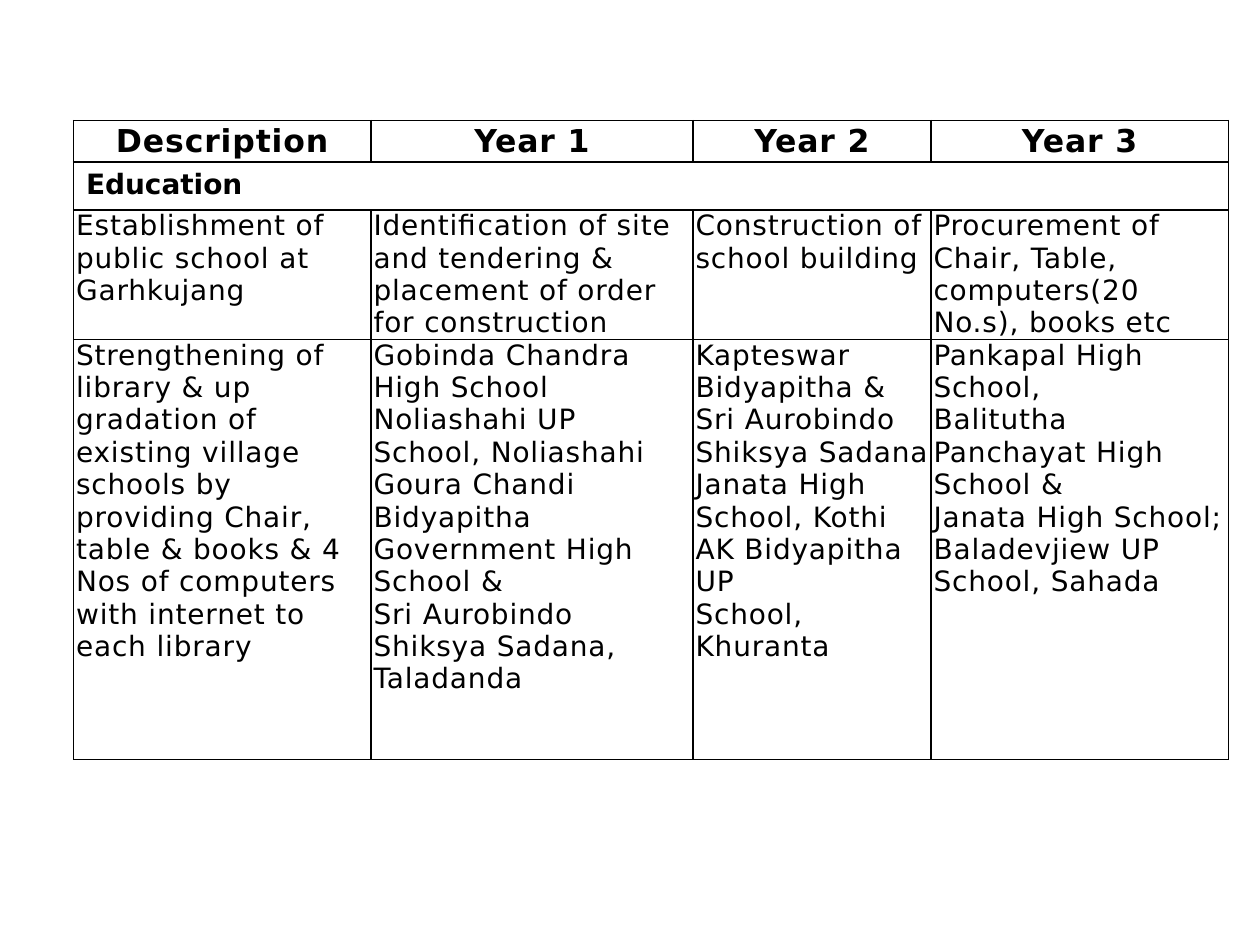
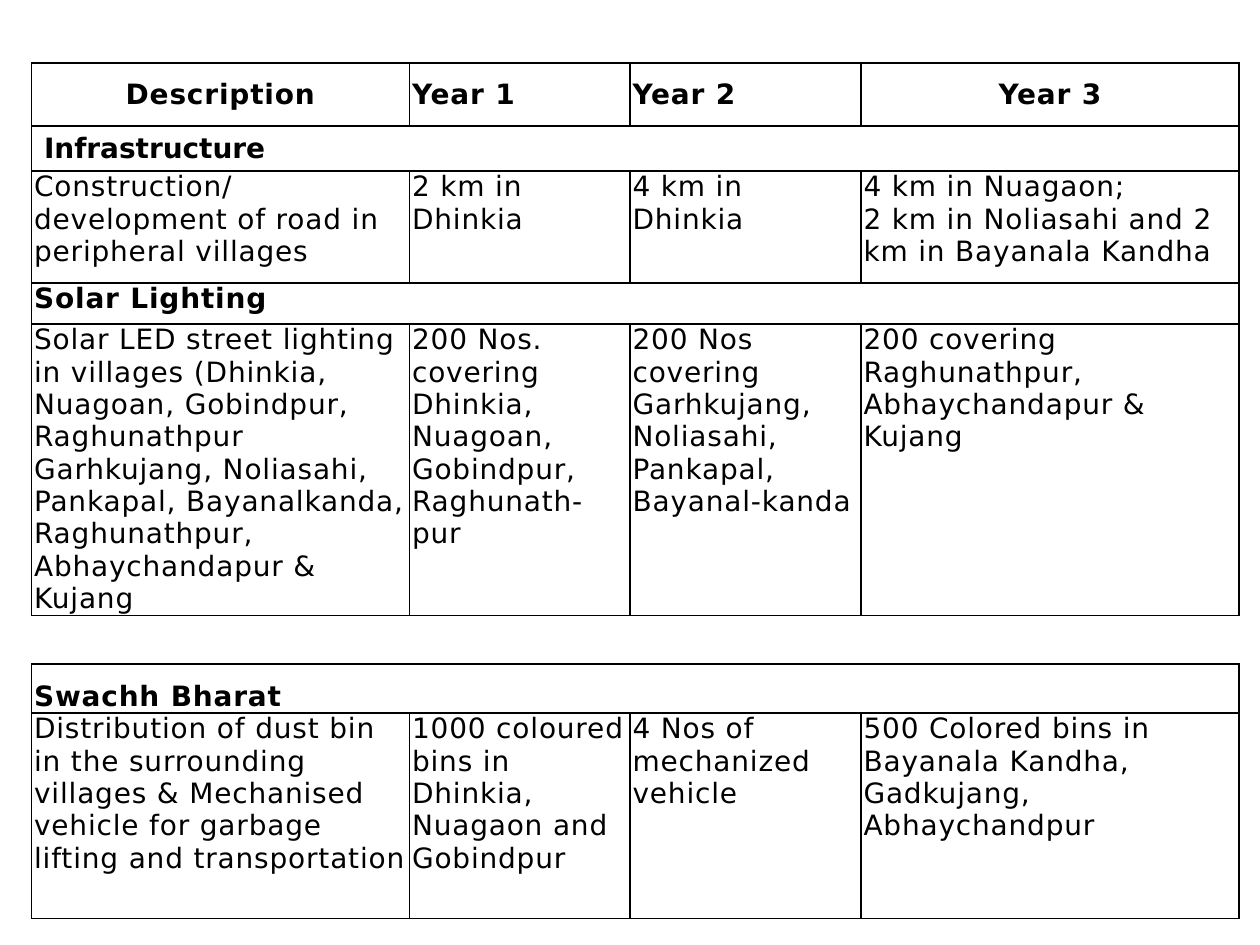
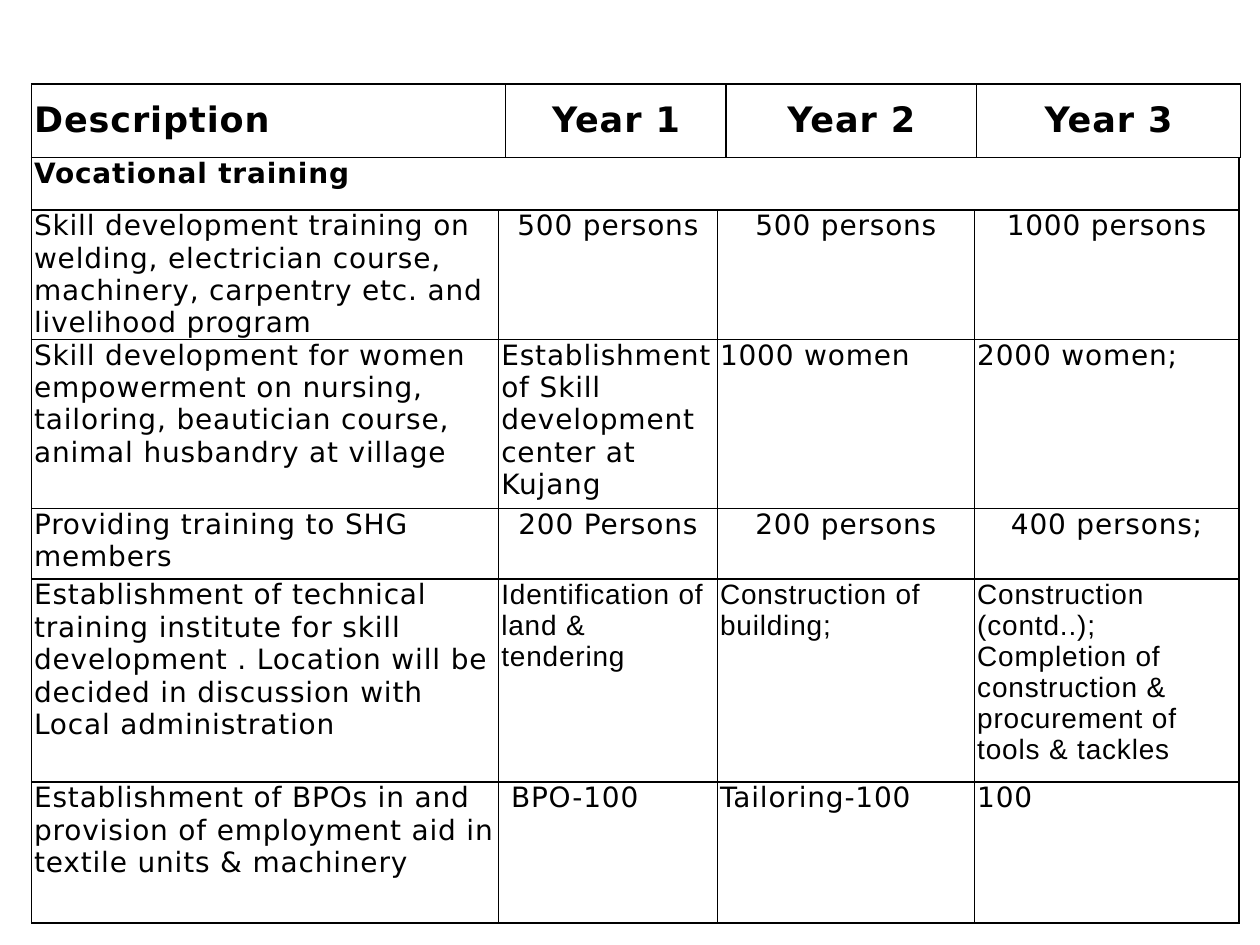
from dataclasses import dataclass, field

from lxml import etree
from pptx import Presentation
from pptx.dml.color import RGBColor
from pptx.enum import text as txt
from pptx.oxml import ns
from pptx.util import Pt

BLACK = RGBColor(0x00, 0x00, 0x00)
BODY_FONT = "DejaVu Sans"
ALIGNMENTS = {"l": txt.PP_ALIGN.LEFT, "c": txt.PP_ALIGN.CENTER}
YEARS = ("Description", "Year 1", "Year 2", "Year 3")


def write(frame, content, size=16, font=BODY_FONT, bold=False, align="l",
          tracking=0.5, line_spacing=None):
    """Fill a text frame, one paragraph per line of content."""
    frame.word_wrap = True
    for index, line in enumerate(content.split("\n")):
        paragraph = frame.add_paragraph() if index else frame.paragraphs[0]
        paragraph.alignment = ALIGNMENTS[align]
        paragraph.line_spacing = line_spacing
        run = paragraph.add_run()
        run.text = line
        run.font.size, run.font.name, run.font.bold = Pt(size), font, bold
        run.font.color.rgb = BLACK
        run.font._element.set("spc", str(round(tracking * 100)))


@dataclass
class Row:
    height: float
    cells: tuple
    aligns: str = "llll"
    fonts: tuple = (BODY_FONT,) * 4
    anchor: txt.MSO_ANCHOR = txt.MSO_ANCHOR.TOP
    margins: tuple = (1.5, 0)
    style: dict = field(default_factory=dict)


def header(height, size, aligns):
    return Row(height, YEARS, aligns, anchor=txt.MSO_ANCHOR.MIDDLE,
               style={"size": size, "bold": True})


def section(height, name, margins=(1.5, 0), **style):
    """A heading row that spans every column."""
    return Row(height, (name,), margins=margins, style={"bold": True, **style})


def inset_section(height, name):
    return section(height, name, margins=(7.2, 3.6), tracking=0)


class Deck:
    def __init__(self, width, height):
        self.presentation = Presentation()
        self.presentation.slide_width = Pt(width)
        self.presentation.slide_height = Pt(height)
        self.slide = None

    def add_slide(self):
        blank = self.presentation.slide_layouts[6]
        self.slide = self.presentation.slides.add_slide(blank)

    def frame_cell(self, cell):
        """Give a cell no fill and a thin black border on each side."""
        cell.fill.background()
        properties = cell._tc.get_or_add_tcPr()
        for index, side in enumerate(("lnL", "lnR", "lnT", "lnB")):
            border = etree.Element(ns.qn(f"a:{side}"), w=str(Pt(1)))
            solid = etree.SubElement(border, ns.qn("a:solidFill"))
            etree.SubElement(solid, ns.qn("a:srgbClr"), val=str(BLACK))
            properties.insert(index, border)

    def add_plan(self, left, top, widths, rows):
        """Draw stacked rows and return the bottom edge."""
        height = sum(row.height for row in rows)
        plan = self.slide.shapes.add_table(
            len(rows), len(widths), Pt(left), Pt(top),
            Pt(sum(widths)), Pt(height)).table
        plan.first_row = plan.horz_banding = False
        for column, width in zip(plan.columns, widths):
            column.width = Pt(width)
        for index, row in enumerate(rows):
            plan.rows[index].height = Pt(row.height)
            cells = list(plan.rows[index].cells)
            for cell in cells:
                self.frame_cell(cell)
            if len(row.cells) == 1:
                cells[0].merge(cells[-1])
            for cell, content, align, font in zip(cells, row.cells, row.aligns, row.fonts):
                side, edge = row.margins
                cell.margin_left = cell.margin_right = Pt(side)
                cell.margin_top = cell.margin_bottom = Pt(edge)
                cell.vertical_anchor = row.anchor
                write(cell.text_frame, content, align=align, font=font, **row.style)
        return top + height


def add_education(deck):
    deck.add_slide()
    left, widths = 42, (170, 184, 136, 170)
    bottom = deck.add_plan(left, 69, widths, [header(23.5, 18, "cccc")])
    deck.add_plan(left, bottom, widths, [
        inset_section(27.5, "Education"),
        Row(74, (
            "Establishment of public school at Garhkujang",
            "Identification of site and tendering & placement of order for construction",
            "Construction of school building",
            "Procurement of Chair, Table, computers(20 No.s), books etc")),
        Row(240, (
            "Strengthening of library & up gradation of existing village schools by "
            "providing Chair, table & books & 4 Nos of computers with internet to each library",
            "Gobinda Chandra High School\nNoliashahi UP School, Noliashahi\n"
            "Goura Chandi Bidyapitha Government High School &\n"
            "Sri Aurobindo Shiksya Sadana, Taladanda",
            "Kapteswar Bidyapitha & Sri Aurobindo Shiksya Sadana\n"
            "Janata High School, Kothi\nAK Bidyapitha UP\nSchool, Khuranta",
            "Pankapal High School,\nBalitutha\nPanchayat High School &\n"
            "Janata High School;\nBaladevjiew UP\nSchool, Sahada")),
    ])


def add_infrastructure(deck):
    deck.add_slide()
    left, widths = 18, (216, 126, 132, 216)
    bottom = deck.add_plan(left, 36, widths, [
        header(36, 16, "cllc"),
        inset_section(25.5, "Infrastructure"),
        Row(64, (
            "Construction/development of road in peripheral villages",
            "2 km in Dhinkia",
            "4 km in Dhinkia",
            "4 km in Nuagaon;\n2 km in Noliasahi and 2 km in Bayanala Kandha")),
        section(23.5, "Solar Lighting"),
        Row(166.5, (
            "Solar LED street lighting in villages (Dhinkia, Nuagoan, Gobindpur, "
            "Raghunathpur Garhkujang, Noliasahi, Pankapal, Bayanalkanda, "
            "Raghunathpur, Abhaychandapur & Kujang",
            "200 Nos. covering Dhinkia, Nuagoan, Gobindpur, Raghunath-pur",
            "200 Nos covering Garhkujang, Noliasahi, Pankapal, Bayanal-kanda",
            "200 covering Raghunathpur, Abhaychandapur & Kujang")),
    ])
    deck.add_plan(left, bottom + 28, widths, [
        section(28, "Swachh Bharat", line_spacing=1.5),
        Row(117.5, (
            "Distribution of dust bin in the surrounding villages & Mechanised "
            "vehicle for garbage lifting and transportation",
            "1000 coloured bins in Dhinkia, Nuagaon and Gobindpur",
            "4 Nos of mechanized vehicle",
            "500 Colored bins in Bayanala Kandha, Gadkujang, Abhaychandpur")),
    ])


def add_vocational_training(deck):
    deck.add_slide()
    left = 18
    bottom = deck.add_plan(left, 48, (271, 126, 143, 151), [header(42, 20, "lccc")])
    deck.add_plan(left, bottom, (267, 125, 147, 151), [
        section(30, "Vocational training"),
        Row(74, (
            "Skill development training on welding, electrician course, machinery, "
            "carpentry etc. and livelihood program",
            "500 persons", "500 persons", "1000 persons"), "lccc"),
        Row(96.5, (
            "Skill development for women empowerment on nursing, tailoring, "
            "beautician course, animal husbandry at village",
            "Establishment of Skill development center at Kujang",
            "1000 women", "2000 women;")),
        Row(40.5, (
            "Providing training to SHG members",
            "200 Persons", "200 persons", "400 persons;"), "lccc"),
        Row(116, (
            "Establishment of technical training institute for skill development . "
            "Location will be decided in discussion with Local administration",
            "Identification of land & tendering",
            "Construction of building;",
            "Construction (contd..);\n"
            "Completion of construction & procurement of tools & tackles"),
            fonts=(BODY_FONT, "Arial", "Arial", "Arial")),
        Row(80.5, (
            "Establishment of BPOs in and provision of employment aid in textile "
            "units & machinery",
            " BPO-100", "Tailoring-100", "100")),
    ])


def main():
    deck = Deck(720, 540)
    add_education(deck)
    add_infrastructure(deck)
    add_vocational_training(deck)
    deck.presentation.save("out.pptx")


if __name__ == "__main__":
    main()
